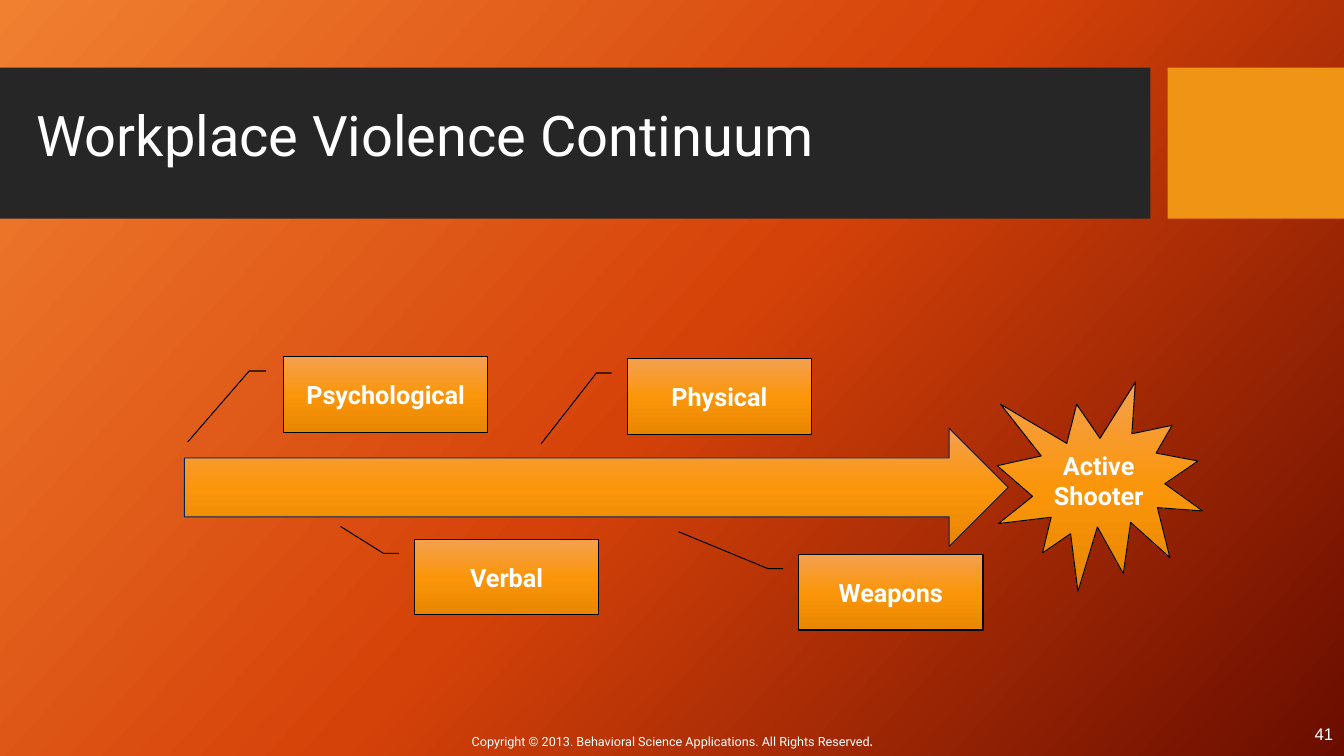
from dataclasses import dataclass
from typing import Any

from lxml.etree import SubElement
from pptx import Presentation
from pptx.dml.color import RGBColor
from pptx.enum.shapes import MSO_SHAPE
from pptx.enum.text import MSO_ANCHOR, MSO_AUTO_SIZE, PP_ALIGN
from pptx.oxml.ns import qn
from pptx.util import Emu, Pt

EMU_PER_PX = 9144  # 100 px to the inch


@dataclass(frozen=True)
class Theme:
    white: str = "FFFFFF"
    banner: str = "262626"
    accent: str = "F09415"
    outline: str = "000000"
    arrow_outline: str = "002060"
    background: tuple[str, ...] = ("F18031", "D54209", "6A0D00")
    amber: tuple[str, ...] = ("F4A050", "FB960A", "E88600")
    font: str = "Roboto"
    number_font: str = "Arial"
    full_stop_font: str = "Calibri"
    title_size: int = 40
    label_size: int = 18
    number_size: int = 12
    full_stop_size: int = 11
    footer_size: int = 9
    line_width: float = 0.75


THEME = Theme()


@dataclass(frozen=True)
class Box:
    left: int
    top: int
    width: int
    height: int

    def emu(self) -> list[Emu]:
        return [px(n) for n in (self.left, self.top, self.width, self.height)]


@dataclass(frozen=True)
class TextRun:
    text: str
    size: int
    font: str = THEME.font
    bold: bool = False


@dataclass(frozen=True)
class Stage:
    label: str
    box: Box
    kind: MSO_SHAPE = MSO_SHAPE.LINE_CALLOUT_2
    pointer_end: tuple[float, float] | None = None  # down and across, as shares of the box
    outline: str = THEME.outline


STAGES = (
    Stage("", Box(183, 425, 817, 117), MSO_SHAPE.RIGHT_ARROW, outline=THEME.arrow_outline),
    Stage("Psychological", Box(281, 354, 203, 75)),
    Stage("Verbal", Box(411, 535, 183, 75), pointer_end=(-0.17, -0.4)),
    Stage("Physical", Box(622, 356, 183, 75)),
    Stage("Weapons", Box(792, 550, 183, 75), pointer_end=(0.0, 0.0)),
    Stage("Active Shooter", Box(989, 379, 204, 208), MSO_SHAPE.EXPLOSION1),
)
POINTER_ENDS = {"Verbal": (-0.17, -0.4), "Weapons": (-0.3, -0.65)}


def px(length: int) -> Emu:
    return Emu(length * EMU_PER_PX)


def apply_format(target: Any, values: dict[str, Any]) -> None:
    for name, value in values.items():
        setattr(target, name, value)


def fill_gradient(fill: Any, element: Any, colors: tuple[str, ...], angle: int) -> None:
    """Spread the colours evenly, at an angle measured clockwise."""
    fill.gradient()
    fill.gradient_angle = 360 - angle
    stops = element.find(f".//{qn('a:gsLst')}")
    for stop in list(stops):
        stops.remove(stop)
    for index, color in enumerate(colors):
        position = 100000 * index // (len(colors) - 1)
        stop = SubElement(stops, qn("a:gs"), pos=str(position))
        SubElement(stop, qn("a:srgbClr"), val=color)


def write_text(shape: Any, runs: list[TextRun], frame_format: dict[str, Any],
               paragraph_format: dict[str, Any]) -> None:
    frame = shape.text_frame
    apply_format(frame, {"word_wrap": True, **frame_format})
    paragraph = frame.paragraphs[0]
    apply_format(paragraph, paragraph_format)
    for text_run in runs:
        run = paragraph.add_run()
        run.text = text_run.text
        apply_format(run.font, {"name": text_run.font, "size": Pt(text_run.size),
                                "bold": text_run.bold})
        run.font.color.rgb = RGBColor.from_string(THEME.white)


def add_band(slide: Any, box: Box, color: str) -> None:
    shape = slide.shapes.add_shape(MSO_SHAPE.RECTANGLE, *box.emu())
    shape.shadow.inherit = False
    shape.fill.solid()
    shape.fill.fore_color.rgb = RGBColor.from_string(color)
    shape.line.fill.background()


def add_stage(slide: Any, stage: Stage) -> None:
    shape = slide.shapes.add_shape(stage.kind, *stage.box.emu())
    shape.shadow.inherit = False
    fill_gradient(shape.fill, shape._element, THEME.amber, 90)
    shape.line.color.rgb = RGBColor.from_string(stage.outline)
    shape.line.width = Pt(THEME.line_width)
    if stage.label in POINTER_ENDS:
        shape.adjustments[4], shape.adjustments[5] = POINTER_ENDS[stage.label]
    if stage.label:
        write_text(shape, [TextRun(stage.label, THEME.label_size, bold=True)],
                   {"vertical_anchor": MSO_ANCHOR.MIDDLE}, {"alignment": PP_ALIGN.CENTER})


def add_text(slide: Any, box: Box, runs: list[TextRun], frame_format: dict[str, Any],
             paragraph_format: dict[str, Any]) -> None:
    write_text(slide.shapes.add_textbox(*box.emu()), runs, frame_format, paragraph_format)


def main() -> None:
    presentation = Presentation()
    apply_format(presentation, {"slide_width": px(1333), "slide_height": px(750)})
    slide = presentation.slides.add_slide(presentation.slide_layouts[6])
    fill_gradient(slide.background.fill, slide._element, THEME.background, 42)

    # Title banner
    add_band(slide, Box(0, 67, 1141, 150), THEME.banner)
    add_band(slide, Box(1158, 67, 175, 150), THEME.accent)
    add_text(slide, Box(26, 96, 916, 83),
             [TextRun("Workplace Violence Continuum", THEME.title_size)],
             {"vertical_anchor": MSO_ANCHOR.MIDDLE}, {"line_spacing": 0.9})

    # Continuum arrow and its stages
    for stage in STAGES:
        add_stage(slide, stage)

    # Slide number and footer
    add_text(slide, Box(1242, 708, 92, 40),
             [TextRun("41", THEME.number_size, THEME.number_font)],
             {"vertical_anchor": MSO_ANCHOR.MIDDLE, "margin_left": px(60)},
             {"alignment": PP_ALIGN.CENTER})
    add_text(slide, Box(317, 720, 700, 29),
             [TextRun("Copyright © 2013. Behavioral Science Applications. All Rights Reserved",
                      THEME.footer_size),
              TextRun(".", THEME.full_stop_size, THEME.full_stop_font)],
             {"auto_size": MSO_AUTO_SIZE.SHAPE_TO_FIT_TEXT}, {"alignment": PP_ALIGN.CENTER})

    presentation.save("out.pptx")


if __name__ == "__main__":
    main()
